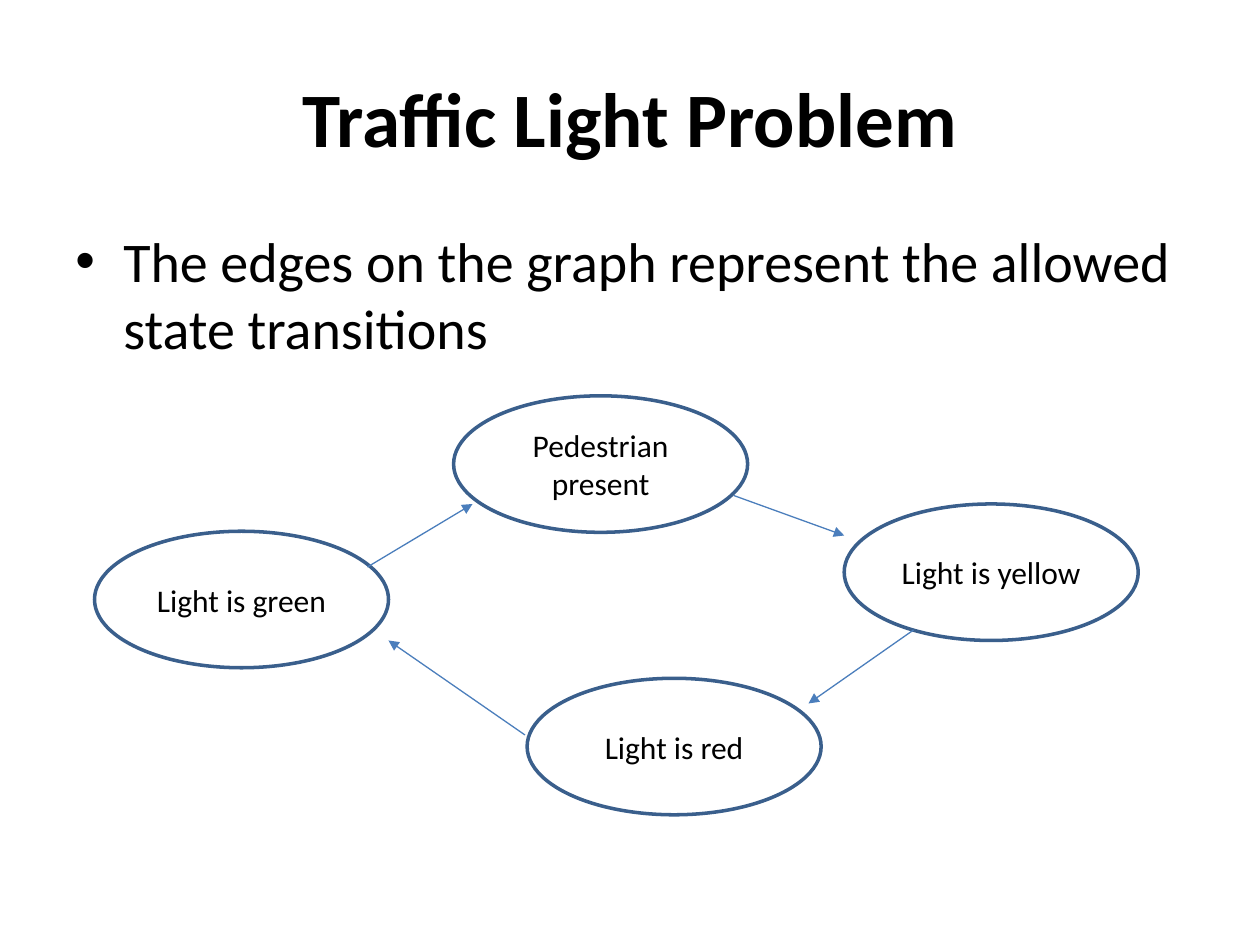
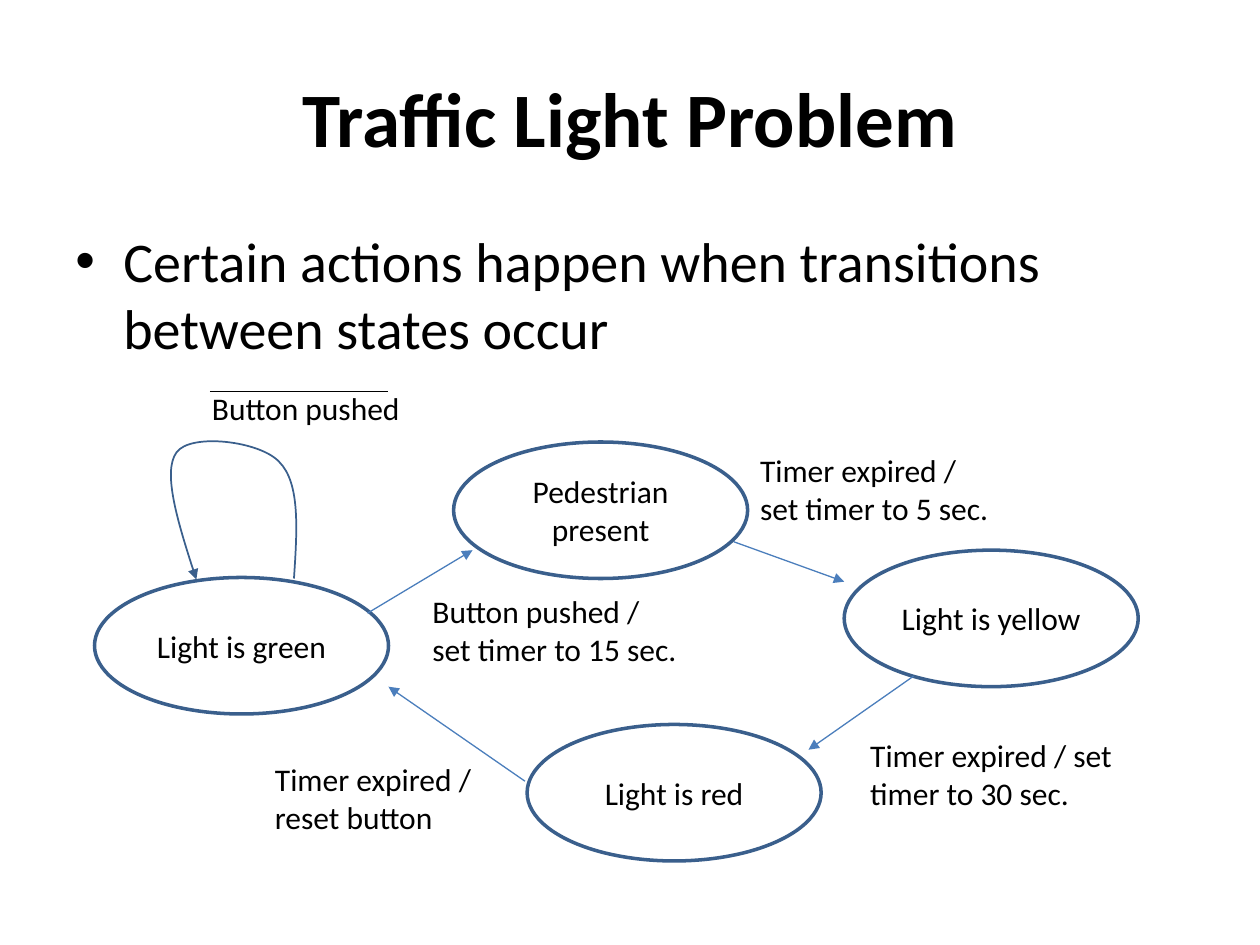
"""Builds two slides that show the traffic light problem as a state graph."""
from pptx import Presentation
from pptx.dml.color import RGBColor
from pptx.enum.shapes import MSO_CONNECTOR, MSO_SHAPE
from pptx.enum.text import MSO_ANCHOR, MSO_AUTO_SIZE, PP_ALIGN
from pptx.oxml import parse_xml
from pptx.oxml.ns import nsdecls, qn
from pptx.oxml.xmlchemy import OxmlElement
from pptx.util import Inches, Pt

BLACK = RGBColor(0x00, 0x00, 0x00)
OUTLINE = RGBColor(0x3A, 0x5F, 0x8C)
ARROW = RGBColor(0x4B, 0x7E, 0xBC)

COLUMNS, ROWS = 120, 90
STATE_SIZE = (28, 13)
LABELLED_DROP = 4.4

TITLE_FONT = {"name": "Calibri", "size": Pt(44), "bold": True}
BODY_FONT = {"name": "Calibri", "size": Pt(32)}
SMALL_FONT = {"name": "Calibri", "size": Pt(18)}

TITLE = "Traffic Light Problem"
STATES = [
    ("Light is green", 9, 50.6),
    ("Light is yellow", 80.4, 48),
    ("Light is red", 50.2, 64.6),
    ("Pedestrian present", 43.2, 37.7),
]
TRANSITIONS = [
    ((35, 54), (45, 48)),
    ((69.9, 47.2), (80.4, 51)),
    ((87, 60), (77, 67)),
    ((50, 70), (37, 61)),
]
ACTIONS = [
    ("Button pushed / set timer to 15 sec.", (40, 55.8, 26, 8.5)),
    ("Button pushed", (19, 36.5, 24.8, 4.8)),
    ("Timer expired / set timer to 5 sec.", (71.2, 42.4, 24.8, 8.5)),
    ("Timer expired / set timer to 30 sec.", (81.7, 69.5, 26.6, 8.5)),
    ("Timer expired / reset button", (25, 71.8, 21.5, 8.5)),
]
GREEN_LOOP = [
    (28, 55.1),
    (28.3, 50.5), (28.6, 46), (26.6, 44),
    (24.8, 42), (18.1, 41.2), (16.8, 43.1),
    (15.5, 44.9), (17, 50), (18.7, 55.2),
]
NOT_PUSHED_BAR = ((20, 37.3), (37, 37.3))


class Deck:
    """Holds the presentation, its grid and the current slide."""

    def __init__(self):
        """Starts an empty presentation and measures its grid cells."""
        self.prs = Presentation()
        self.prs.slide_width, self.prs.slide_height = Inches(10), Inches(7.5)
        self.cell = (self.prs.slide_width / COLUMNS, self.prs.slide_height / ROWS)

    def emu(self, *lengths):
        """Turns alternating columns and rows into EMU."""
        return [round(length * self.cell[i % 2]) for i, length in enumerate(lengths)]

    def put_text(self, shape, text, font, align=PP_ALIGN.LEFT, anchor=MSO_ANCHOR.TOP):
        """Puts one formatted paragraph into a shape and returns it."""
        frame = shape.text_frame
        frame.word_wrap = True
        frame.vertical_anchor = anchor
        paragraph = frame.paragraphs[0]
        paragraph.alignment = align
        run = paragraph.add_run()
        run.text = text
        for attribute, value in font.items():
            setattr(run.font, attribute, value)
        run.font.color.rgb = BLACK
        return paragraph

    def stroke(self, shape, color, width, arrow=False):
        """Draws the line of a shape or connector, with an optional arrowhead."""
        shape.line.color.rgb = color
        shape.line.width = Pt(width)
        if arrow:
            head = OxmlElement("a:tailEnd")
            head.set("type", "triangle")
            shape.line._get_or_add_ln().append(head)

    def slide(self, title):
        """Adds a slide and formats its title."""
        self.current = self.prs.slides.add_slide(self.prs.slide_layouts[5])
        self.shapes = self.current.shapes
        heading = self.shapes.title
        heading.left, heading.top, heading.width, heading.height = self.emu(6, 3.6, 108, 15)
        self.put_text(heading, title, TITLE_FONT, PP_ALIGN.CENTER, MSO_ANCHOR.MIDDLE)

    def bullet(self, text):
        """Adds the bulleted statement under the title."""
        box = self.shapes.add_textbox(*self.emu(6, 21, 110, 59.4))
        properties = self.put_text(box, text, BODY_FONT)._p.get_or_add_pPr()
        indent = Inches(0.38)
        properties.set("marL", str(indent))
        properties.set("indent", str(-indent))
        for mark in ('buFont %s typeface="Arial"', 'buChar %s char="•"'):
            properties.append(parse_xml(f"<a:{mark % nsdecls('a')}/>"))

    def state(self, text, left, top):
        """Adds one state of the graph."""
        oval = self.shapes.add_shape(MSO_SHAPE.OVAL, *self.emu(left, top, *STATE_SIZE))
        oval.shadow.inherit = False
        oval.fill.background()
        self.stroke(oval, OUTLINE, 2)
        self.put_text(oval, text, SMALL_FONT, PP_ALIGN.CENTER, MSO_ANCHOR.MIDDLE)

    def line(self, start, end, color, arrow=False):
        """Adds a straight line or arrow."""
        edge = self.shapes.add_connector(MSO_CONNECTOR.STRAIGHT, *self.emu(*start, *end))
        self.stroke(edge, color, 0.75, arrow)
        edge._element.spPr.append(OxmlElement("a:effectLst"))

    def label(self, text, area):
        """Adds the condition and action of a transition."""
        box = self.shapes.add_textbox(*self.emu(*area))
        self.put_text(box, text, SMALL_FONT)
        box.text_frame.auto_size = MSO_AUTO_SIZE.SHAPE_TO_FIT_TEXT

    def curve(self, points):
        """Adds a curved arrow from a start point and triples of Bezier points."""
        start, *controls = [self.emu(*point) for point in points]
        builder = self.shapes.build_freeform(*start)
        builder.add_line_segments(controls, close=False)
        loop = builder.convert_to_shape()
        segments = list(loop._element.iter(qn("a:lnTo")))
        for first in range(0, len(segments), 3):
            bezier = OxmlElement("a:cubicBezTo")
            segments[first].addprevious(bezier)
            for segment in segments[first:first + 3]:
                bezier.append(segment[0])
                segment.getparent().remove(segment)
        loop.shadow.inherit = False
        loop.fill.background()
        self.stroke(loop, OUTLINE, 1, arrow=True)

    def graph(self, drop=0):
        """Adds all states and transitions, moved down by some rows."""
        for text, left, top in STATES:
            self.state(text, left, top + drop)
        for (x1, y1), (x2, y2) in TRANSITIONS:
            self.line((x1, y1 + drop), (x2, y2 + drop), ARROW, arrow=True)


def main():
    """Builds both slides and saves them."""
    deck = Deck()

    deck.slide(TITLE)
    deck.bullet("The edges on the graph represent the allowed state transitions")
    deck.graph()

    deck.slide(TITLE)
    deck.bullet("Certain actions happen when transitions between states occur")
    deck.graph(LABELLED_DROP)
    deck.curve(GREEN_LOOP)
    for text, area in ACTIONS:
        deck.label(text, area)
    deck.line(*NOT_PUSHED_BAR, BLACK)

    deck.prs.save("out.pptx")


if __name__ == "__main__":
    main()
